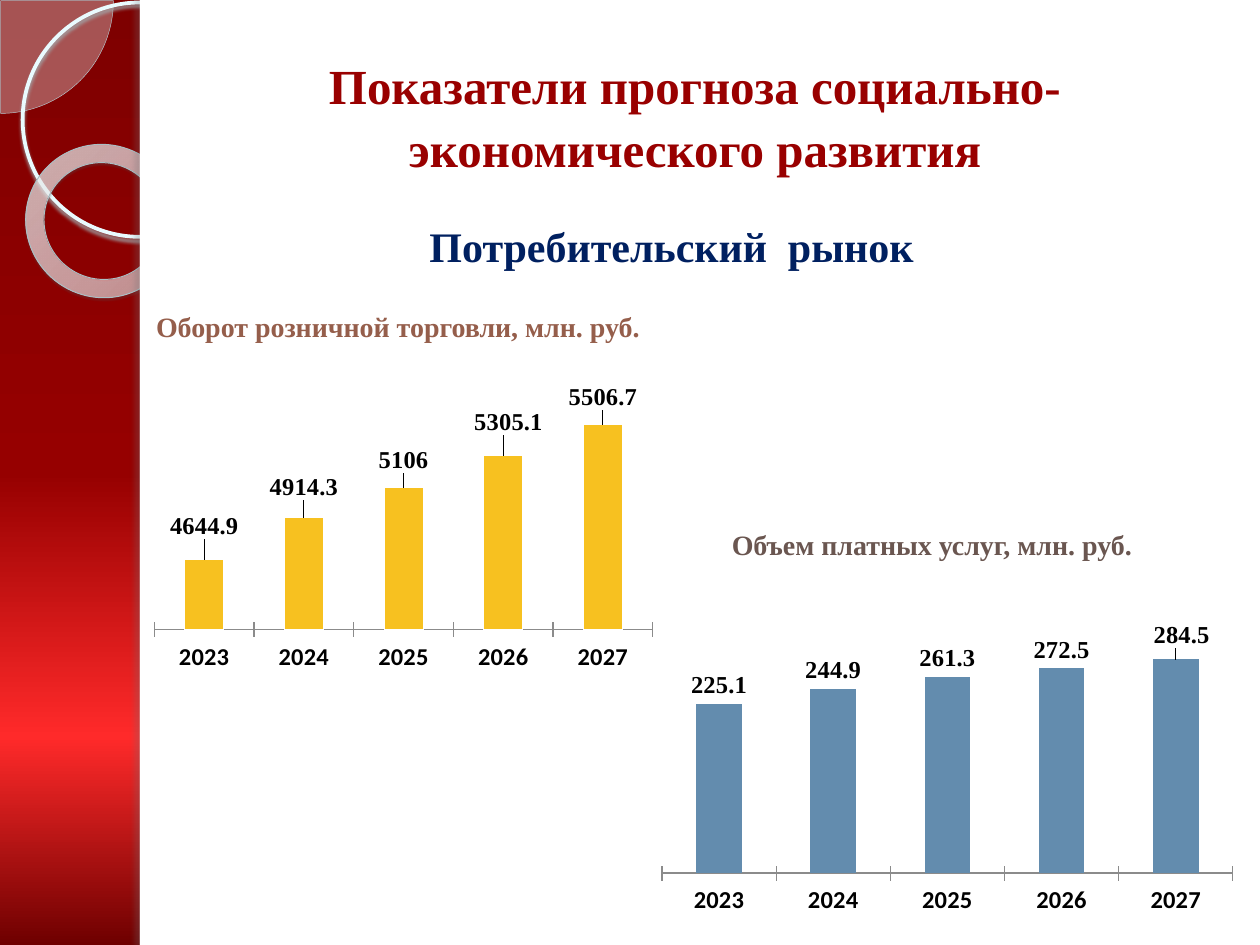
from pptx import Presentation
from pptx.chart.data import CategoryChartData as Data
from pptx.dml.color import RGBColor
from pptx.enum.chart import XL_CHART_TYPE as Kind, XL_LABEL_POSITION as Place, XL_TICK_MARK as Tick
from pptx.enum.shapes import MSO_SHAPE as Form
from pptx.enum.text import MSO_ANCHOR as Anchor, PP_ALIGN as Align
from pptx.oxml import parse_xml
from pptx.oxml.ns import nsdecls, qn
from pptx.util import Inches, Pt

WHITE = RGBColor(0xFF, 0xFF, 0xFF)
BLACK = RGBColor(0, 0, 0)
GREY = RGBColor(0x8B, 0x8B, 0x8B)
RED = RGBColor(0x99, 0x00, 0x00)
NAVY = RGBColor(0x00, 0x20, 0x60)
BROWN = RGBColor(0x95, 0x5E, 0x4B)
TAUPE = RGBColor(0x6A, 0x56, 0x50)
GOLD = RGBColor(0xF7, 0xC1, 0x20)
BLUE = RGBColor(0x63, 0x8C, 0xAE)
ICE = RGBColor(0xF8, 0xFC, 0xFD)
RIM = RGBColor(0xB7, 0xCB, 0xD1)
RING = RGBColor(0xE9, 0xFA, 0xFE)
EDGE = RGBColor(0xAA, 0xBF, 0xC4)

YEARS = ["2023", "2024", "2025", "2026", "2027"]
DOWN = '<a:lin ang="5400000" scaled="0"/>'
ROUND = ('<a:path path="circle"><a:fillToRect l="-408000" t="-50000" '
         'r="508000" b="150000"/></a:path>')


def blend(node, stops, way):
    marks = "".join(
        f'<a:gs pos="{pos * 1000}"><a:srgbClr val="{tone}">'
        f'<a:alpha val="{alpha * 1000}"/></a:srgbClr></a:gs>'
        for pos, tone, alpha in stops)
    old = node.find(".//" + qn("a:gradFill"))
    old.getparent().replace(old, parse_xml(
        f'<a:gradFill {nsdecls("a")} rotWithShape="1">'
        f'<a:gsLst>{marks}</a:gsLst>{way}</a:gradFill>'))


def layout(pairs):
    inner = "".join(f'<c:{tag} val="{val}"/>' for tag, val in pairs)
    return parse_xml(f'<c:layout {nsdecls("c")}><c:manualLayout>{inner}'
                     '</c:manualLayout></c:layout>')


class Deck:
    serif = "Times New Roman"
    sans = "Calibri"

    def __init__(self):
        self.file = Presentation()
        self.file.slide_width = Inches(10)
        self.file.slide_height = Inches(7.5)
        self.slide = self.file.slides.add_slide(self.file.slide_layouts[5])

    def ground(self, stops):
        self.slide.background.fill.gradient()
        blend(self.slide.element, stops, DOWN)

    def font(self, font, name, size, color):
        font.name = name
        font.size = Pt(size)
        font.bold = True
        font.color.rgb = color

    def shape(self, form, box, fill=None, line=None, width=0, shade=None):
        item = self.slide.shapes.add_shape(form, *map(Inches, box))
        item.shadow.inherit = False
        if fill is None:
            item.fill.background()
        else:
            item.fill.solid()
            item.fill.fore_color.rgb = fill
        if line is None:
            item.line.fill.background()
        else:
            item.line.color.rgb = line
            item.line.width = Pt(width)
        if shade:
            tone, alpha, blur, dist, turn = shade
            item.element.spPr.find(qn("a:effectLst")).append(parse_xml(
                f'<a:outerShdw {nsdecls("a")} blurRad="{Pt(blur)}" dist="{Pt(dist)}" '
                f'dir="{turn * 60000}" algn="tl" rotWithShape="0"><a:srgbClr val="{tone}">'
                f'<a:alpha val="{alpha * 1000}"/></a:srgbClr></a:outerShdw>'))
        return item

    def label(self, item, text, size, color, align=Align.LEFT):
        frame = item.text_frame
        frame.word_wrap = True
        frame.vertical_anchor = Anchor.TOP
        frame.text = text
        para = frame.paragraphs[0]
        para.alignment = align
        self.font(para.font, self.serif, size, color)
        return para

    def title(self, box, text, size, color):
        item = self.slide.shapes.title
        item.left, item.top, item.width, item.height = map(Inches, box)
        item.element.getparent().append(item.element)
        self.label(item, text, size, color, Align.CENTER).line_spacing = 1.07

    def text(self, box, text, size, color):
        item = self.slide.shapes.add_textbox(*map(Inches, box))
        self.label(item, text, size, color)

    def chart(self, box, vals, color, gap, span, plot, shifts, line=None):
        data = Data()
        data.categories = YEARS
        data.add_series("Series 1", vals)
        chart = self.slide.shapes.add_chart(
            Kind.COLUMN_CLUSTERED, *map(Inches, box), data).chart
        chart.has_legend = False
        chart.has_title = False
        self.font(chart.font, self.sans, 14, BLACK)
        chart.category_axis.major_tick_mark = Tick.CROSS
        chart.category_axis.format.line.color.rgb = GREY
        axis = chart.value_axis
        axis.visible = False
        axis.has_major_gridlines = False
        axis.minimum_scale, axis.maximum_scale = span
        bars = chart.plots[0]
        bars.vary_by_categories = False
        bars.gap_width = gap
        row = bars.series[0]
        row.format.fill.solid()
        row.format.fill.fore_color.rgb = color
        if line is not None:
            row.format.line.color.rgb = line
        tags = row.data_labels
        tags.show_value = True
        spots = [row.points[spot].data_label for spot in shifts]
        for tag in [tags, *spots]:
            tag.position = Place.OUTSIDE_END
            self.font(tag.font, self.serif, 14, BLACK)
        marks = list(chart.element.iter(qn("c:dLbl")))
        for mark, shift in zip(marks, shifts.values()):
            mark.find(qn("c:idx")).addnext(layout(zip("xy", shift)))
        area = chart.element.find(".//" + qn("c:plotArea"))
        for old in area.findall(qn("c:layout")):
            area.remove(old)
        area.insert(0, layout(
            zip(("layoutTarget", "xMode", "yMode", "x", "y", "w", "h"),
                ("inner", "edge", "edge", *plot))))


def main():
    deck = Deck()
    deck.ground([(0, "7E0000", 100), (50, "960000", 96),
                 (78, "FF2A2A", 100), (100, "6E0000", 100)])

    pie = deck.shape(Form.PIE, (-0.89, -0.89, 1.79, 1.79), ICE, RIM, 0.25)
    pie.adjustments[0] = 0
    pie.adjustments[1] = 54
    tone = pie.element.spPr.find(qn("a:solidFill"))[0]
    tone.append(parse_xml(f'<a:alpha {nsdecls("a")} val="33000"/>'))
    deck.shape(Form.OVAL, (0.18, 0.02, 1.86, 1.86), None, RING, 2.15,
               ("A1AEB1", 85, 2, 2, 90))
    ring = deck.shape(Form.DONUT, (0.2, 1.15, 1.23, 1.21), ICE, EDGE, 0.58,
                      ("4E5759", 35, 1, 1.2, 75))
    ring.adjustments[0] = 0.12
    ring.rotation = 38.6
    ring.fill.gradient()
    blend(ring.element, [(0, "F9FDFE", 70), (70, "FCFEFF", 55),
                         (100, "B1D8E2", 60)], ROUND)
    deck.shape(Form.RECTANGLE, (1.11, 0, 8.89, 7.5), WHITE)
    deck.shape(Form.RECTANGLE, (1.11, 0, 0.08, 7.5), WHITE,
               shade=("6D7476", 25, 3, 3, 180))

    deck.title((1.3, 0.36, 8.43, 1.04),
               "Показатели прогноза социально-экономического развития", 28, RED)
    deck.text((3.31, 1.7, 4.37, 0.5), "Потребительский  рынок", 24, NAVY)
    deck.chart((1.22, 3.04, 4.17, 2.44), (4644.9, 4914.3, 5106, 5305.1, 5506.7),
               GOLD, 155, (4200, 5630), (0, 0.06, 0.95, 0.74),
               {0: (0, -0.05), 1: (0, -0.04), 2: (0, -0.03),
                3: (0.01, -0.05), 4: (0, -0.03)}, WHITE)
    deck.text((1.14, 2.41, 4.17, 0.37), "Оборот розничной торговли, млн. руб.", 16, BROWN)
    deck.chart((5.16, 4.93, 4.72, 2.35), (225.1, 244.9, 261.3, 272.5, 284.5),
               BLUE, 150, (0, 300), (0.02, 0.08, 0.96, 0.77), {4: (0.01, -0.02)})
    deck.text((5.71, 4.14, 3.54, 0.37), "Объем платных услуг, млн. руб.", 16, TAUPE)
    deck.file.save("out.pptx")


if __name__ == "__main__":
    main()
